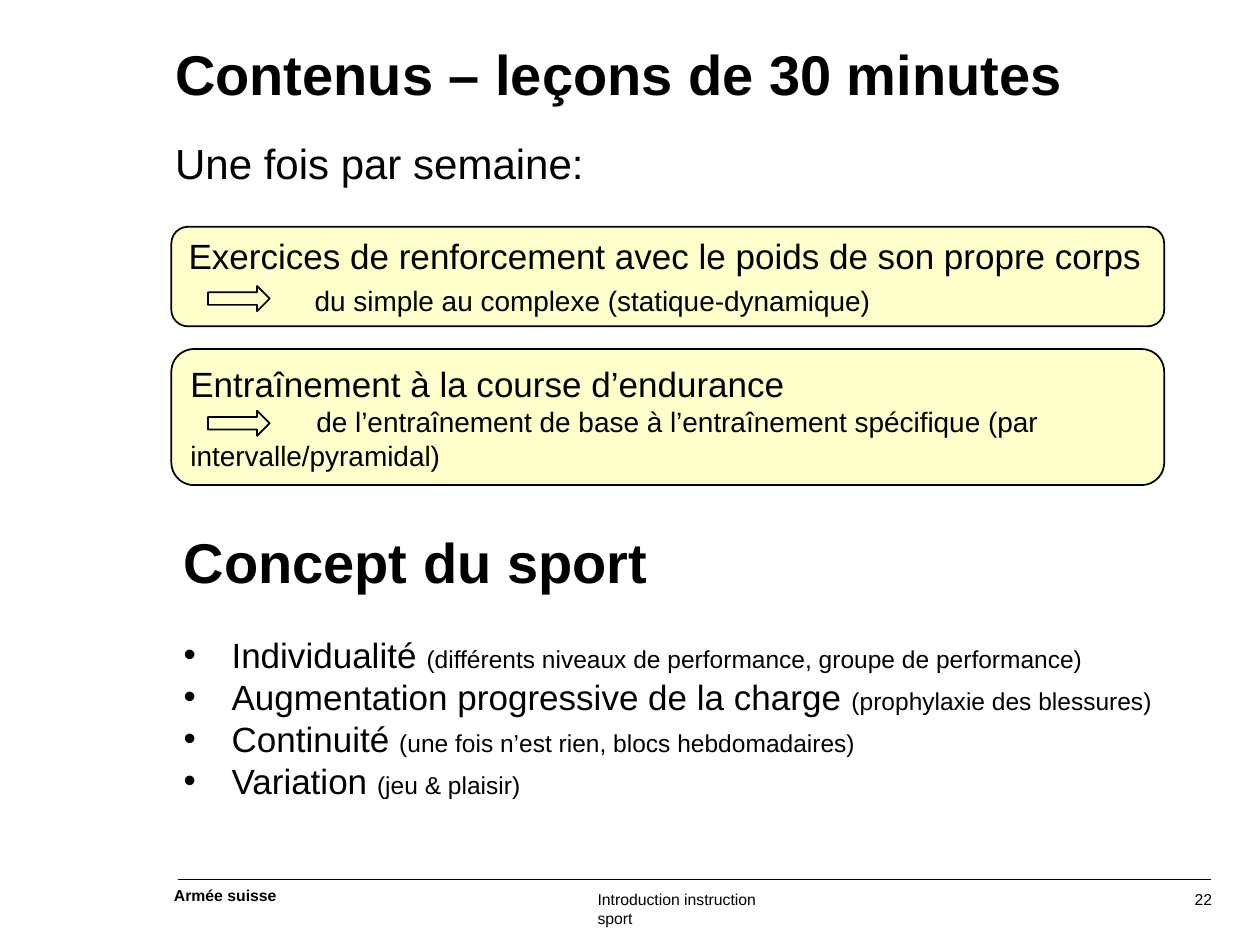
from lxml import etree
from pptx import Presentation
from pptx.dml.color import RGBColor
from pptx.enum.shapes import MSO_CONNECTOR, MSO_SHAPE
from pptx.enum.text import MSO_ANCHOR, MSO_AUTO_SIZE, PP_ALIGN
from pptx.oxml.ns import qn
from pptx.util import Inches, Pt

LEFT, RIGHT = PP_ALIGN.LEFT, PP_ALIGN.RIGHT
TOP, MIDDLE = MSO_ANCHOR.TOP, MSO_ANCHOR.MIDDLE
OCTAGON, ROUNDED = MSO_SHAPE.OCTAGON, MSO_SHAPE.ROUNDED_RECTANGLE
ARROW = MSO_SHAPE.RIGHT_ARROW
STRAIGHT = MSO_CONNECTOR.STRAIGHT

COLORS = {"text": "000000", "line": "000000", "card": "FFFFCC"}
FONT = "Arial"
HEADING = {"size": Pt(32), "bold": True}
LEAD = {"size": Pt(24)}
MAIN = {"size": Pt(20)}
DETAIL = {"size": Pt(16)}
REMARK = {"size": Pt(14)}
FOOTER = {"size": Pt(9)}

PRINCIPLES = [
    ("Individualité ", "(différents niveaux de performance, groupe de performance)"),
    ("Augmentation progressive de la charge ", "(prophylaxie des blessures)"),
    ("Continuité ", "(une fois n’est rien, blocs hebdomadaires)"),
    ("Variation ", "(jeu & plaisir)"),
]


def color(name):
    return RGBColor.from_string(COLORS[name])


def add_span(para, text, style):
    span = para.add_run()
    span.text = text
    span.font.name = FONT
    span.font.color.rgb = color("text")
    for name, value in style.items():
        setattr(span.font, name, value)


def set_frame(frame, inset=(0, 0), anchor=TOP, wrap=True):
    across, down = (Inches(length) for length in inset)
    settings = {
        "margin_left": across, "margin_right": across,
        "margin_top": down, "margin_bottom": down,
        "vertical_anchor": anchor, "word_wrap": wrap,
        "auto_size": MSO_AUTO_SIZE.NONE,
    }
    for name, value in settings.items():
        setattr(frame, name, value)


def write(frame, lines, align=LEFT):
    """Fill a frame with paragraphs, each a list of (text, style) spans."""
    for index, spans in enumerate(lines):
        para = frame.add_paragraph() if index else frame.paragraphs[0]
        para.alignment = align
        for text, style in spans:
            add_span(para, text, style)


def add_text(page, box, lines, align=LEFT, **layout):
    frame = page.shapes.add_textbox(*map(Inches, box)).text_frame
    set_frame(frame, **layout)
    write(frame, lines, align)
    return frame


def add_outlined(page, kind, box):
    shape = page.shapes.add_shape(kind, *map(Inches, box))
    shape.shadow.inherit = False
    shape.fill.solid()
    shape.fill.fore_color.rgb = color("card")
    shape.line.color.rgb = color("line")
    shape.line.width = Pt(1)
    return shape


def add_title(page, box, text):
    title = page.shapes.title
    title.left, title.top, title.width, title.height = map(Inches, box)
    set_frame(title.text_frame)
    write(title.text_frame, [[(text, HEADING)]])


def add_tab_stop(para, position):
    stops = etree.SubElement(para._p.get_or_add_pPr(), qn("a:tabLst"))
    etree.SubElement(stops, qn("a:tab"), pos=str(Inches(position)), algn="l")


def add_card(page, box, lines, arrow_top):
    """Rounded card whose second line is led in by an arrow."""
    left, top, _, _ = box
    frame = add_outlined(page, ROUNDED, box).text_frame
    set_frame(frame, inset=(0.1, 0.05), anchor=MIDDLE)
    write(frame, lines)
    add_tab_stop(frame.paragraphs[1], 1)
    add_outlined(page, ARROW, (left + 0.29, top + arrow_top, 0.49, 0.2))


def add_bullet(para):
    properties = para._p.get_or_add_pPr()
    properties.set("marL", str(Inches(0.38)))
    properties.set("indent", str(-Inches(0.38)))
    etree.SubElement(properties, qn("a:buFont"), typeface=FONT)
    etree.SubElement(properties, qn("a:buChar"), char="•")


def add_concept(page, box):
    lines = [[("Concept du sport", HEADING)]]
    lines += [[(name, MAIN), (remark, REMARK)] for name, remark in PRINCIPLES]
    frame = add_text(page, box, lines, inset=(0.1, 0.05))
    bullets = frame.paragraphs[1:]
    bullets[0].space_before = Pt(22)
    for para in bullets:
        add_bullet(para)


def add_footer_label(page, box, text, style, wrap):
    shape = page.shapes.add_shape(OCTAGON, *map(Inches, box))
    shape.shadow.inherit = False
    shape.fill.background()
    shape.line.fill.background()
    set_frame(shape.text_frame, wrap=wrap)
    write(shape.text_frame, [[(text, style)]])


def add_footer(page, box):
    left, top, width, _ = box
    rule = page.shapes.add_connector(
        STRAIGHT, Inches(left + 0.06), Inches(top), Inches(left + width), Inches(top))
    rule.line.color.rgb = color("line")
    rule.line.width = Pt(0.75)
    etree.SubElement(rule._element.spPr, qn("a:effectLst"))
    add_footer_label(page, (left, top + 0.02, 0.88, 0.21), "Armée suisse",
                     FOOTER | {"bold": True}, wrap=False)
    add_footer_label(page, (left + 3.33, top + 0.02, 1.69, 0.43),
                     "Introduction instruction sport", FOOTER, wrap=True)
    add_text(page, (left + width - 0.24, top + 0.08, 0.25, 0.15),
             [[("22", FOOTER)]], align=RIGHT)


def main():
    deck = Presentation()
    deck.slide_width, deck.slide_height = Inches(10), Inches(7.5)
    page = deck.slides.add_slide(deck.slide_layouts[5])
    add_footer(page, (1.35, 6.98, 8.26, 0.45))
    add_title(page, (1.39, 0.31, 8.16, 1.08), "Contenus – leçons de 30 minutes")
    add_text(page, (1.39, 1.09, 8.43, 0.4), [[("Une fois par semaine:", LEAD)]])
    add_card(page, (1.36, 1.8, 7.88, 0.79), [
        [("Exercices de renforcement avec le poids de son propre corps", MAIN)],
        [("\t", MAIN), ("du simple au complexe (statique-dynamique)", DETAIL)],
    ], arrow_top=0.47)
    add_card(page, (1.36, 2.77, 7.88, 1.08), [
        [("Entraînement à la course d’endurance", MAIN)],
        [("\tde l’entraînement de base à l’entraînement spécifique "
          "(par intervalle/pyramidal)", DETAIL)],
    ], arrow_top=0.49)
    add_concept(page, (1.36, 4.14, 7.97, 2.29))
    deck.save("out.pptx")


if __name__ == "__main__":
    main()
